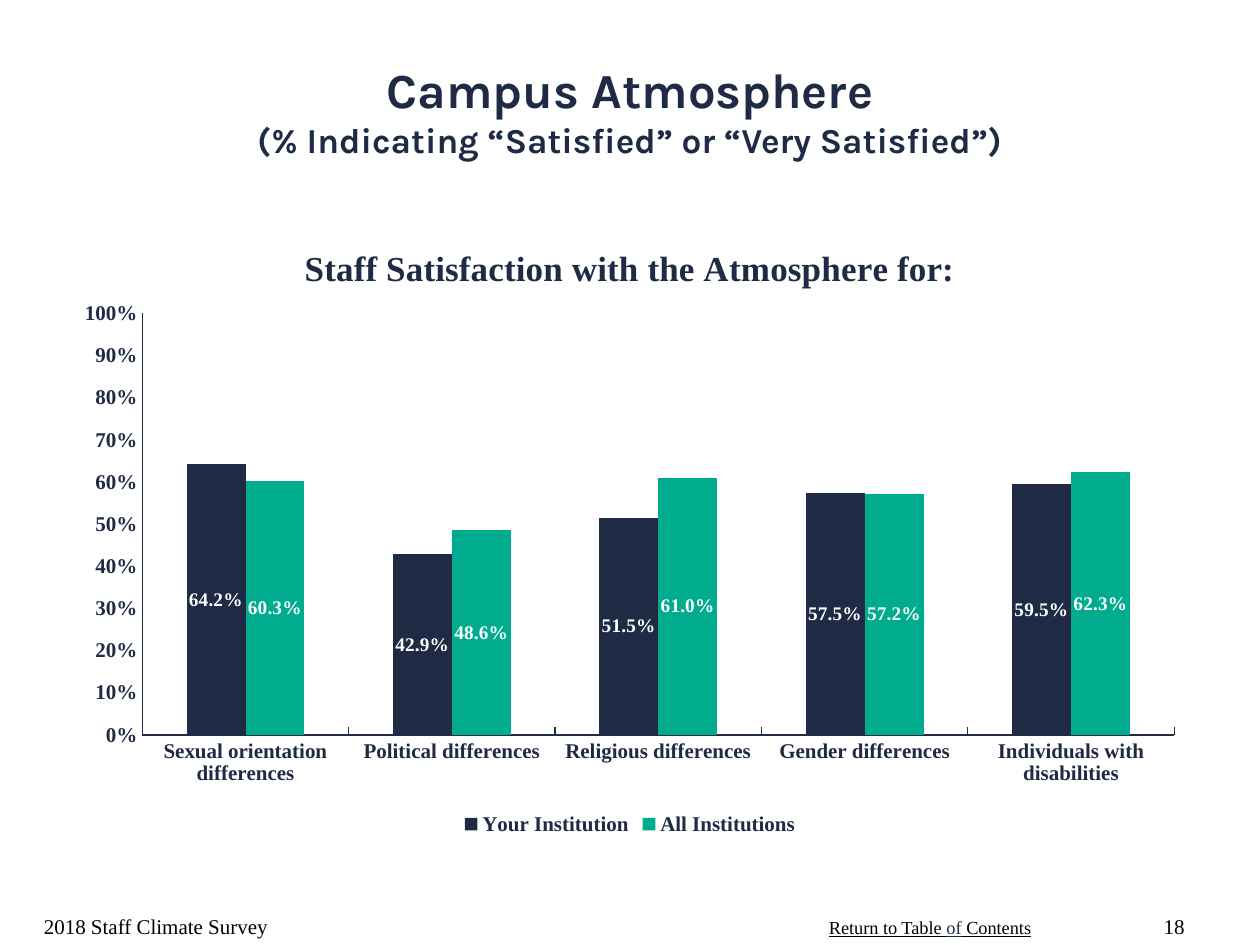
import dataclasses

import lxml.etree
import pptx
import pptx.chart.data
import pptx.dml.color
import pptx.enum.chart
import pptx.enum.text
import pptx.oxml
import pptx.oxml.ns
import pptx.util

Inches = pptx.util.Inches
Align = pptx.enum.text.PP_ALIGN
Anchor = pptx.enum.text.MSO_ANCHOR


@dataclasses.dataclass(frozen=True)
class Theme:
    navy: str = "1F2A44"
    green: str = "00AB8E"
    black: str = "000000"
    white: str = "FFFFFF"
    heading_font: str = "Karla"
    body_font: str = "Times New Roman"
    title_size: float = 28
    subtitle_size: float = 20
    axis_size: float = 12
    label_size: float = 11
    footer_size: float = 12
    link_size: float = 10.5
    axis_width: float = 0.75


class SurveySlide:
    """Adds styled survey elements to one slide."""

    def __init__(self, slide, theme):
        self.slide = slide
        self.theme = theme

    def style(self, font, size, color, bold=False, name=None):
        font.name = name or self.theme.body_font
        font.size = pptx.util.Pt(size)
        font.bold = bold
        font.color.rgb = pptx.dml.color.RGBColor.from_string(color)

    def text(self, box, runs, align=Align.LEFT, anchor=Anchor.TOP, wrap=True,
             name=None, bold=False, underline=None):
        frame = self.slide.shapes.add_textbox(*map(Inches, box)).text_frame
        frame.word_wrap = wrap
        frame.vertical_anchor = anchor
        paragraph = frame.paragraphs[0]
        paragraph.alignment = align
        for index, (wording, size, color) in enumerate(runs):
            if index and name:
                paragraph.add_line_break()
            run = paragraph.add_run()
            run.text = wording
            self.style(run.font, size, color, bold, name)
            run.font.underline = underline

    def axis(self, axis, tick_mark):
        axis.has_major_gridlines = False
        axis.major_tick_mark = tick_mark
        axis.minor_tick_mark = pptx.enum.chart.XL_TICK_MARK.NONE
        self.style(axis.tick_labels.font, self.theme.axis_size, self.theme.navy, True)
        axis.format.line.width = pptx.util.Pt(self.theme.axis_width)
        axis.format.line.color.rgb = pptx.dml.color.RGBColor.from_string(self.theme.navy)

    def plot_layout(self, chart, **fractions):
        plot_area = chart._chartSpace.chart.plotArea
        qn = pptx.oxml.ns.qn
        for previous in plot_area.findall(qn("c:layout")):
            plot_area.remove(previous)
        layout = pptx.oxml.parse_xml(f"<c:layout {pptx.oxml.ns.nsdecls('c')}/>")
        manual = lxml.etree.SubElement(layout, qn("c:manualLayout"))
        settings = {"layoutTarget": "inner", "xMode": "edge", "yMode": "edge", **fractions}
        for tag, value in settings.items():
            lxml.etree.SubElement(manual, qn(f"c:{tag}")).set("val", str(value))
        plot_area.insert(0, layout)

    def column_chart(self, box, heading, categories, series):
        theme = self.theme
        data = pptx.chart.data.CategoryChartData(number_format="0.0%")
        data.categories = categories
        for name, values, _ in series:
            data.add_series(name, values)
        chart = self.slide.shapes.add_chart(
            pptx.enum.chart.XL_CHART_TYPE.COLUMN_CLUSTERED, *map(Inches, box), data).chart
        self.style(chart.font, 10, theme.navy, True)

        chart.has_title = True
        chart.chart_title.include_in_layout = False
        title = chart.chart_title.text_frame
        title.text = heading
        self.style(title.paragraphs[0].runs[0].font, theme.subtitle_size, theme.navy, True)

        chart.has_legend = True
        chart.legend.position = pptx.enum.chart.XL_LEGEND_POSITION.BOTTOM
        chart.legend.include_in_layout = False
        self.style(chart.legend.font, theme.axis_size, theme.navy, True)

        self.axis(chart.category_axis, pptx.enum.chart.XL_TICK_MARK.INSIDE)
        self.axis(chart.value_axis, pptx.enum.chart.XL_TICK_MARK.NONE)
        chart.value_axis.minimum_scale = 0
        chart.value_axis.maximum_scale = 1
        chart.value_axis.major_unit = 0.1
        chart.value_axis.tick_labels.number_format = "0%"
        chart.value_axis.tick_labels.number_format_is_linked = False

        plot = chart.plots[0]
        plot.gap_width = 150
        plot.overlap = 0
        plot.vary_by_categories = False
        for columns, (_, _, color) in zip(plot.series, series):
            columns.invert_if_negative = False
            columns.format.fill.solid()
            columns.format.fill.fore_color.rgb = pptx.dml.color.RGBColor.from_string(color)
            labels = columns.data_labels
            labels.show_value = True
            labels.position = pptx.enum.chart.XL_LABEL_POSITION.CENTER
            labels.number_format = "0.0%"
            labels.number_format_is_linked = False
            self.style(labels.font, theme.label_size, theme.white, True)
        self.plot_layout(chart, x=0.07, y=0.15, w=0.91, h=0.68)


def main():
    theme = Theme()
    presentation = pptx.Presentation()
    presentation.slide_width = Inches(10)
    presentation.slide_height = Inches(7.5)
    survey = SurveySlide(presentation.slides.add_slide(presentation.slide_layouts[6]), theme)

    survey.text((6.48, 7.22, 1.82, 0.28), [
        ("Return to Table ", theme.link_size, theme.black),
        ("of", theme.link_size, theme.navy),
        (" Contents", theme.link_size, theme.black),
    ], wrap=False, underline=True)
    survey.text((0, 0.25, 10, 1.25), [
        ("Campus Atmosphere", theme.title_size, theme.navy),
        ("(% Indicating “Satisfied” or “Very Satisfied”)", theme.subtitle_size, theme.navy),
    ], Align.CENTER, Anchor.MIDDLE, name=theme.heading_font, bold=True)
    survey.column_chart(
        (0.5, 1.75, 9, 4.92),
        "Staff Satisfaction with the Atmosphere for:",
        ["Sexual orientation differences", "Political differences", "Religious differences",
         "Gender differences", "Individuals with disabilities"],
        [("Your Institution", (0.642, 0.429, 0.515, 0.575, 0.595), theme.navy),
         ("All Institutions", (0.603, 0.486, 0.61, 0.572, 0.623), theme.green)])
    for left, width, wording, align in (
            (0.25, 3.17, "2018 Staff Climate Survey", Align.LEFT),
            (9, 0.5, "18", Align.RIGHT)):
        survey.text((left, 7, width, 0.5), [(wording, theme.footer_size, theme.black)],
                    align, Anchor.BOTTOM)
    presentation.save("out.pptx")


if __name__ == "__main__":
    main()
